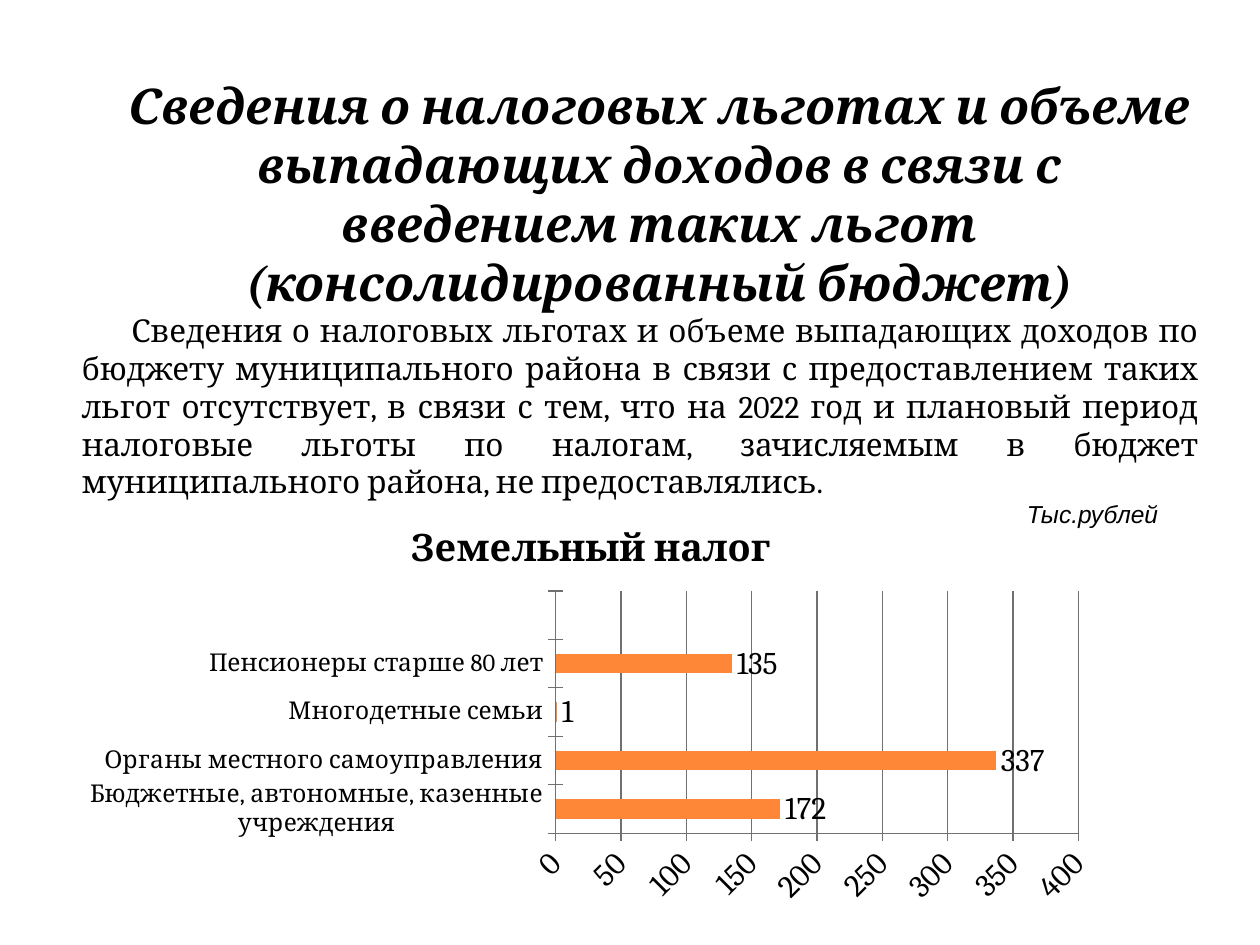
"""Builds the slide on tax benefits with a bar chart of the land tax."""
from lxml.etree import SubElement
from pptx import Presentation
from pptx.chart.data import CategoryChartData
from pptx.dml.color import RGBColor
from pptx.enum.chart import XL_CHART_TYPE as ChartType
from pptx.enum.chart import XL_LABEL_POSITION as LabelPosition
from pptx.enum.chart import XL_TICK_MARK as TickMark
from pptx.enum.text import PP_ALIGN as Align
from pptx.oxml.ns import qn
from pptx.util import Cm, Pt

BLACK = RGBColor(0x00, 0x00, 0x00)
ORANGE = RGBColor(0xFE, 0x86, 0x37)
GRAY = RGBColor(0x70, 0x70, 0x70)


def set_font(font, **formats):
    font.color.rgb = BLACK
    for attribute, value in formats.items():
        setattr(font, attribute, value)


deck = Presentation()
deck.slide_width, deck.slide_height = Cm(25.4), Cm(19.05)
slide = deck.slides.add_slide(deck.slide_layouts[6])

passages = [
    ("Сведения о налоговых льготах и объеме выпадающих доходов в связи с "
     "введением таких льгот (консолидированный бюджет)",
     (2.18, 1.4, 22.23, 3.84), Align.CENTER, 0,
     {"name": "Cambria", "size": Pt(28), "bold": True, "italic": True}),
    ("Сведения о налоговых льготах и объеме выпадающих доходов по бюджету "
     "муниципального района в связи с предоставлением таких льгот отсутствует, "
     "в связи с тем, что на 2022 год и плановый период налоговые льготы по "
     "налогам, зачисляемым в бюджет муниципального района, не предоставлялись.",
     (1.4, 6.15, 23.01, 3.33), Align.JUSTIFY, 1,
     {"name": "Cambria", "size": Pt(18)}),
    ("Тыс.рублей", (20.45, 9.93, 3.38, 0.86), Align.LEFT, 0,
     {"name": "Arial", "size": Pt(14), "italic": True}),
]
for wording, place, alignment, indent, formats in passages:
    frame = slide.shapes.add_textbox(*map(Cm, place)).text_frame
    frame.word_wrap = True
    paragraph = frame.paragraphs[0]
    paragraph.text = wording
    paragraph.alignment = alignment
    paragraph._p.get_or_add_pPr().set("indent", str(Cm(indent)))
    set_font(paragraph.runs[0].font, **formats)

benefits = CategoryChartData()
benefits.categories = [
    "Бюджетные, автономные, казенные учреждения",
    "Органы местного самоуправления",
    "Многодетные семьи",
    "Пенсионеры старше 80 лет",
    "",
]
benefits.add_series("Земельный налог", [172, 337, 1, 135, None])
land_tax = slide.shapes.add_chart(
    ChartType.BAR_CLUSTERED, Cm(1.4), Cm(10.11), Cm(21.03), Cm(8.31), benefits).chart
set_font(land_tax.font, name="Cambria", size=Pt(18))
land_tax.has_legend = False
land_tax.has_title = True
heading = land_tax.chart_title.text_frame
heading.text = "Земельный налог"
set_font(heading.paragraphs[0].runs[0].font, name="Cambria", size=Pt(21.6), bold=True)

groups, amounts = land_tax.category_axis, land_tax.value_axis
for axis, size in ((groups, 14), (amounts, 18)):
    axis.major_tick_mark = TickMark.CROSS
    axis.format.line.color.rgb = GRAY
    set_font(axis.tick_labels.font, name="Cambria", size=Pt(size))
groups.has_major_gridlines = False
amounts.major_gridlines.format.line.color.rgb = GRAY
for attribute, value in {"minimum_scale": 0, "maximum_scale": 400, "major_unit": 50}.items():
    setattr(amounts, attribute, value)
amounts._element.find(qn("c:txPr")).find(qn("a:bodyPr")).set("rot", "-2700000")

bars = land_tax.plots[0]
bars.gap_width = 150
bars.vary_by_categories = False
bars.series[0].format.fill.solid()
bars.series[0].format.fill.fore_color.rgb = ORANGE
bars.has_data_labels = True
bars.data_labels.show_value = True
bars.data_labels.position = LabelPosition.OUTSIDE_END
set_font(bars.data_labels.font, name="Cambria", size=Pt(18))

plot_area = land_tax._chartSpace.chart.plotArea
for former in plot_area.findall(qn("c:layout")):
    plot_area.remove(former)
layout = SubElement(plot_area, qn("c:layout"))
plot_area.insert(0, layout)
manual = SubElement(layout, qn("c:manualLayout"))
for tag, value in (("layoutTarget", "inner"), ("xMode", "edge"), ("yMode", "edge"),
                   ("x", "0.466"), ("y", "0.217"), ("w", "0.501"), ("h", "0.588")):
    SubElement(manual, qn(f"c:{tag}")).set("val", value)

deck.save("out.pptx")
